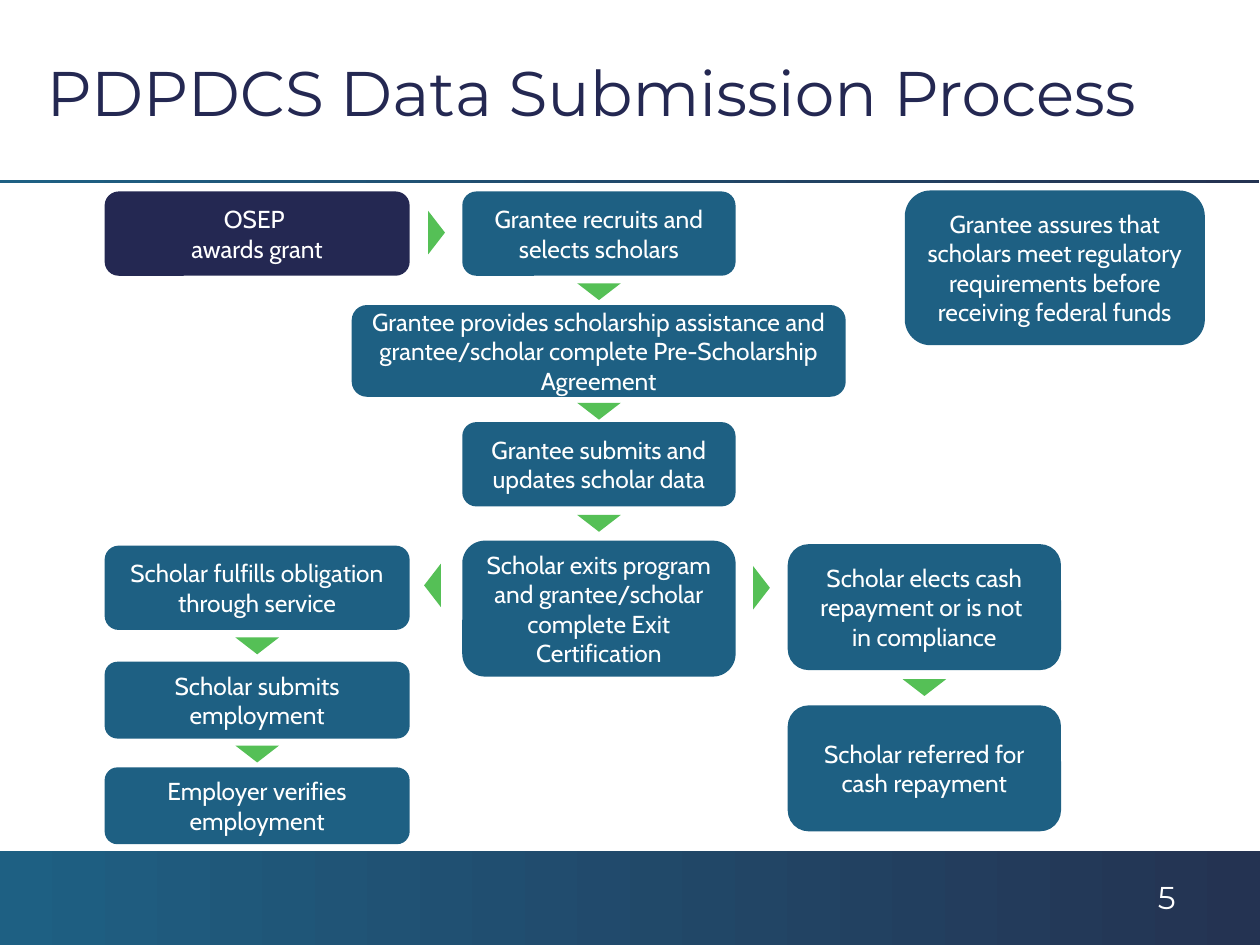
from dataclasses import dataclass

import pptx
import pptx.dml.color
import pptx.enum.shapes
import pptx.enum.text
import pptx.util

Cm = pptx.util.Cm
Pt = pptx.util.Pt
RGBColor = pptx.dml.color.RGBColor
SHAPE = pptx.enum.shapes.MSO_SHAPE
ALIGN = pptx.enum.text.PP_ALIGN
MIDDLE = pptx.enum.text.MSO_ANCHOR.MIDDLE


@dataclass(frozen=True)
class Theme:
    navy: RGBColor = RGBColor(0x24, 0x28, 0x52)
    teal: RGBColor = RGBColor(0x1E, 0x60, 0x83)
    band_end: RGBColor = RGBColor(0x24, 0x33, 0x52)
    green: RGBColor = RGBColor(0x55, 0xC0, 0x56)
    white: RGBColor = RGBColor(0xFF, 0xFF, 0xFF)
    heading_font: str = "Montserrat"
    body_font: str = "Cabin"
    title_size: int = 36
    number_size: int = 18
    step_size: int = 14


THEME = Theme()

# Columns of the flow: left edge and width in cm
LEFT = (2.11, 6.15)
MIDDLE_COLUMN = (9.32, 5.51)
RIGHT = (15.88, 5.51)
WIDE = (7.09, 9.96)
ASIDE = (18.24, 6.05)

# Text, column, top, height
STEPS = [
    ("Grantee recruits and selects scholars", MIDDLE_COLUMN, 3.86, 1.7),
    ("Grantee provides scholarship assistance and grantee/scholar complete "
     "Pre-Scholarship Agreement", WIDE, 6.15, 1.85),
    ("Grantee submits and updates scholar data", MIDDLE_COLUMN, 8.51, 1.7),
    ("Scholar exits program and grantee/scholar complete Exit Certification",
     MIDDLE_COLUMN, 10.9, 2.74),
    ("Scholar elects cash repayment or is not \vin compliance", RIGHT, 10.97, 2.54),
    ("Scholar referred for cash repayment", RIGHT, 14.22, 2.54),
    ("Scholar fulfills obligation through service", LEFT, 11, 1.7),
    ("Scholar submits employment", LEFT, 13.34, 1.55),
    ("Employer verifies employment", LEFT, 15.47, 1.55),
    ("Grantee assures that scholars meet regulatory requirements before "
     "receiving federal funds", ASIDE, 3.84, 3.12),
]

# Column and vertical centre of each downward arrow
DOWN_ARROWS = [
    (MIDDLE_COLUMN, 5.88), (MIDDLE_COLUMN, 8.29), (MIDDLE_COLUMN, 10.55),
    (LEFT, 13.02), (LEFT, 15.2), (RIGHT, 13.86),
]

# Centre and rotation of each sideways arrow
SIDE_ARROWS = [(8.8, 4.69, 90), (15.35, 11.85, 90), (8.72, 11.8, 270)]


def write_text(shape, text, font_values, alignment=ALIGN.LEFT):
    frame = shape.text_frame
    frame.word_wrap = True
    frame.text = text
    paragraph = frame.paragraphs[0]
    paragraph.alignment = alignment
    font = paragraph.runs[0].font
    for run in paragraph.runs:
        font = run.font
        font.color.rgb = font_values["color"]
        for name in ("name", "size"):
            setattr(font, name, font_values[name])


def add_plain_shape(slide, kind, left, top, width, height):
    shape = slide.shapes.add_shape(kind, Cm(left), Cm(top), Cm(width), Cm(height))
    shape.shadow.inherit = False
    shape.line.fill.background()
    return shape


def add_gradient_band(slide, left, top, width, height):
    fill = add_plain_shape(slide, SHAPE.RECTANGLE, left, top, width, height).fill
    fill.gradient()
    fill.gradient_angle = 0
    for stop, position, color in zip(fill.gradient_stops, (0, 1),
                                     (THEME.teal, THEME.band_end)):
        stop.position = position
        stop.color.rgb = color


def add_label(slide, text, left, top, width, height, font_values):
    box = slide.shapes.add_textbox(Cm(left), Cm(top), Cm(width), Cm(height))
    write_text(box, text, font_values)
    return box


def add_step(slide, text, column, top, height, color=THEME.teal):
    left, width = column
    step = add_plain_shape(slide, SHAPE.ROUNDED_RECTANGLE, left, top, width, height)
    step.fill.solid()
    step.fill.fore_color.rgb = color
    step.text_frame.vertical_anchor = MIDDLE
    write_text(step, text, {"name": THEME.body_font, "size": Pt(THEME.step_size),
                            "color": THEME.white}, ALIGN.CENTER)


def add_arrow(slide, center_x, center_y, rotation):
    """Add a flat triangle around its centre; rotation 0 points up."""
    width, height = 0.88, 0.34
    arrow = add_plain_shape(slide, SHAPE.ISOSCELES_TRIANGLE, center_x - width / 2,
                            center_y - height / 2, width, height)
    arrow.rotation = rotation
    arrow.fill.solid()
    arrow.fill.fore_color.rgb = THEME.green


def main():
    presentation = pptx.Presentation()
    presentation.slide_width = Cm(25.4)
    presentation.slide_height = Cm(19.05)
    slide = presentation.slides.add_slide(presentation.slide_layouts[6])

    add_gradient_band(slide, 0, 17.15, 25.4, 1.9)
    add_gradient_band(slide, -0.02, 3.63, 25.4, 0.07)
    title = add_label(slide, "PDPDCS Data Submission Process", 0.69, 0.48, 24.03, 2.74,
                      {"name": THEME.heading_font, "size": Pt(THEME.title_size),
                       "color": THEME.navy})
    title.text_frame.vertical_anchor = MIDDLE

    add_step(slide, "OSEP \vawards grant", LEFT, 3.86, 1.7, THEME.navy)
    for step in STEPS:
        add_step(slide, *step)
    for (left, width), center_y in DOWN_ARROWS:
        add_arrow(slide, left + width / 2, center_y, 180)
    for arrow in SIDE_ARROWS:
        add_arrow(slide, *arrow)

    add_label(slide, "5", 23.09, 17.58, 1.9, 1.02,
              {"name": THEME.heading_font, "size": Pt(THEME.number_size),
               "color": THEME.white})
    presentation.save("out.pptx")


if __name__ == "__main__":
    main()
